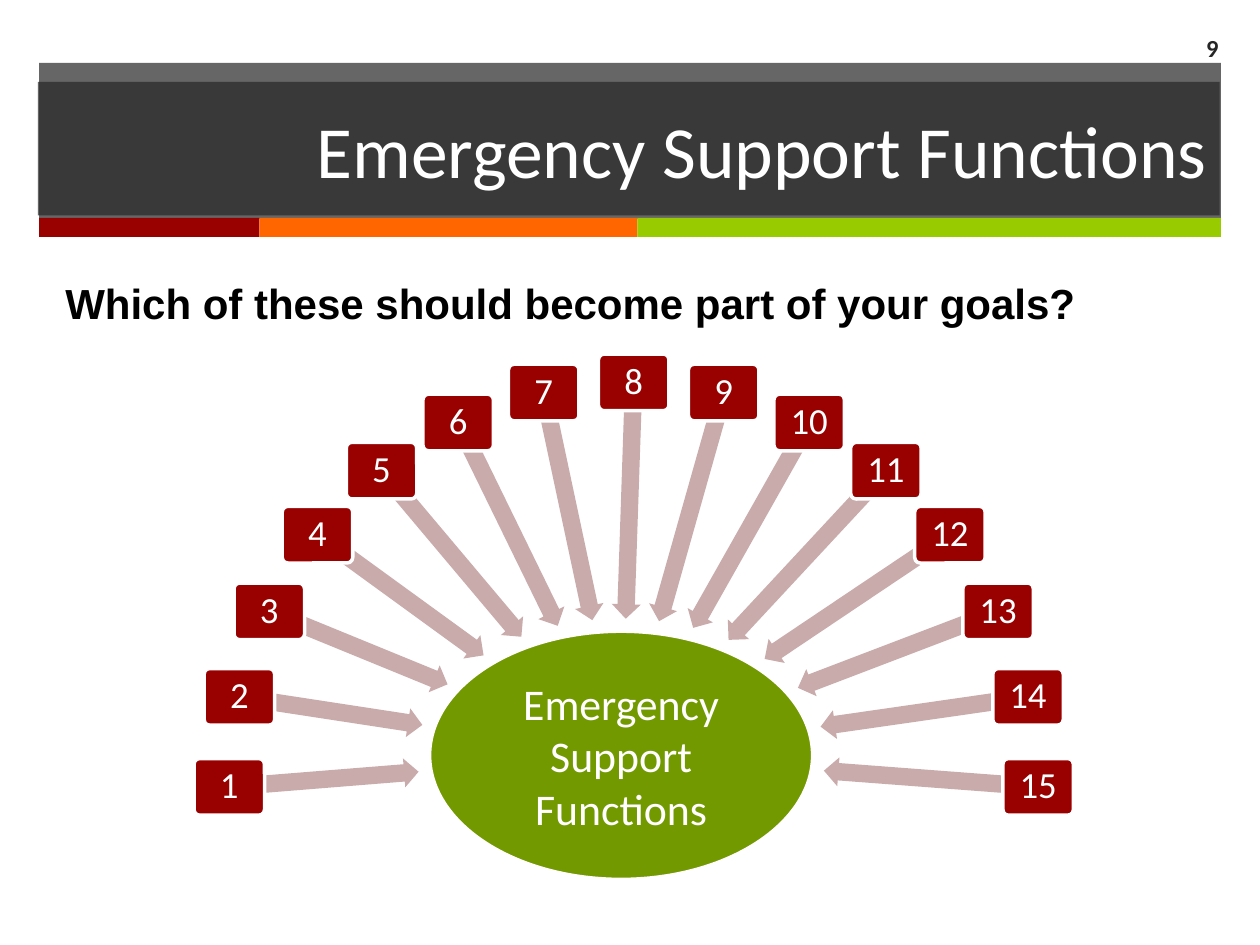
import collections
import math

import pptx
import pptx.dml.color
import pptx.enum.shapes
import pptx.enum.text
import pptx.oxml.ns
import pptx.util
from lxml import etree

SHAPES = pptx.enum.shapes.MSO_SHAPE
ALIGN = pptx.enum.text.PP_ALIGN
ANCHOR = pptx.enum.text.MSO_ANCHOR

COLUMNS, ROWS = 100, 75
CELL = pptx.util.Inches(0.1)

Box = collections.namedtuple("Box", "left top width height")


class Theme:
    """Colours, fonts and type sizes of the slide."""
    dark, white, black = "262626", "FFFFFF", "000000"
    red, orange, lime = "990000", "FF6600", "99CC00"
    hub, arrow = "739900", "CAABAB"
    font, question_font = "Calibri", "Arial"
    title, hub_size, question, card, number = 42, 25, 24, 21, 14


def cells(*counts):
    """Turn counts of grid cells into slide lengths."""
    return [round(count * CELL) for count in counts]


def colour(code):
    """Return the colour object for a hexadecimal code."""
    return pptx.dml.color.RGBColor.from_string(code)


def paint(shape, code, opacity=100, outline=None):
    """Fill a shape, set its outline and drop its shadow."""
    shape.fill.solid()
    shape.fill.fore_color.rgb = colour(code)
    if opacity < 100:
        tone = shape.fill._xPr.find(".//" + pptx.oxml.ns.qn("a:srgbClr"))
        etree.SubElement(tone, pptx.oxml.ns.qn("a:alpha"), val=str(opacity * 1000))
    if outline:
        shape.line.color.rgb = colour(outline)
        shape.line.width = pptx.util.Pt(2)
    else:
        shape.line.fill.background()


def add_block(slide, kind, box, code, **finish):
    """Add a painted preset shape in a box."""
    block = slide.shapes.add_shape(kind, *cells(*box))
    block.shadow.inherit = False
    paint(block, code, **finish)
    return block


def write(shape, text, size, code=Theme.white, font=Theme.font, bold=False,
          align=ALIGN.CENTER, anchor=ANCHOR.MIDDLE, inset=None, spacing=None):
    """Put formatted text into a shape."""
    frame = shape.text_frame
    frame.text = text
    frame.word_wrap = True
    frame.auto_size = pptx.enum.text.MSO_AUTO_SIZE.NONE
    frame.vertical_anchor = anchor
    if inset is not None:
        frame.margin_left = frame.margin_right = pptx.util.Inches(inset)
        frame.margin_top = frame.margin_bottom = pptx.util.Inches(inset)
    paragraph = frame.paragraphs[0]
    paragraph.alignment = align
    paragraph.line_spacing = spacing
    style = paragraph.runs[0].font
    style.name, style.size, style.bold = font, pptx.util.Pt(size), bold
    style.color.rgb = colour(code)


def build_header(slide, box, text):
    """Draw the title band with its colour strip along the bottom."""
    strip = 1.5
    add_block(slide, SHAPES.RECTANGLE, box._replace(height=box.height - 1.4),
              Theme.dark, opacity=70)
    left = box.left
    for width, code in ((17.5, Theme.red), (30, Theme.orange), (46.3, Theme.lime)):
        add_block(slide, SHAPES.RECTANGLE,
                  Box(left, box.top + box.height - strip, width, strip), code)
        left += width
    title = slide.shapes.title
    title.left, title.top, title.width, title.height = cells(
        box.left - 0.1, box.top + strip, box.width, 10.6)
    paint(title, Theme.dark, opacity=70)
    write(title, text, Theme.title, align=ALIGN.RIGHT)
    title.element.getparent().append(title.element)


def build_label(slide, box, text, size, **style):
    """Add a line of free text in a box."""
    write(slide.shapes.add_textbox(*cells(*box)), text, size, **style)


def build_fan(slide, box, hub_text, count):
    """Spread numbered cards on a half circle, with arrows to a hub."""
    card_width, card_height, arrow_height, gap = 5.6, 4.5, 2.3, 1
    hub_width, hub_height = 30.4, 19.7
    radius = (box.width - card_width) / 2
    centre_x = box.left + box.width / 2
    centre_y = box.top + card_height / 2 + radius
    hub_x = centre_x - 1
    hub_y = box.top + box.height - hub_height / 2

    hub = add_block(slide, SHAPES.OVAL,
                    Box(hub_x - hub_width / 2, hub_y - hub_height / 2,
                        hub_width, hub_height), Theme.hub, outline=Theme.white)
    write(hub, hub_text, Theme.hub_size, inset=0.02)

    for index in range(count):
        turn = math.pi * (1 + index / (count - 1))
        card_x = centre_x + radius * math.cos(turn)
        card_y = centre_y + radius * math.sin(turn)

        angle = math.atan2(card_y - hub_y, card_x - hub_x)
        rim = 1 / math.hypot(2 * math.cos(angle) / hub_width,
                             2 * math.sin(angle) / hub_height)
        length = math.hypot(card_x - hub_x, card_y - hub_y) - rim - gap
        middle_x = card_x - length / 2 * math.cos(angle)
        middle_y = card_y - length / 2 * math.sin(angle)
        arrow = add_block(slide, SHAPES.LEFT_ARROW,
                          Box(middle_x - length / 2, middle_y - arrow_height / 2,
                              length, arrow_height), Theme.arrow)
        arrow.adjustments[0] = 0.6
        arrow.rotation = math.degrees(angle) % 360

        card = add_block(slide, SHAPES.ROUNDED_RECTANGLE,
                         Box(card_x - card_width / 2, card_y - card_height / 2,
                             card_width, card_height),
                         Theme.red, outline=Theme.white)
        card.adjustments[0] = 0.1
        write(card, str(index + 1), Theme.card, inset=0.04, spacing=0.9)


def main():
    """Build the slide and save it."""
    deck = pptx.Presentation()
    deck.slide_width, deck.slide_height = cells(COLUMNS, ROWS)
    slide = deck.slides.add_slide(deck.slide_layouts.get_by_name("Title Only"))
    build_header(slide, Box(3.1, 5, 93.8, 13.8), "Emergency Support Functions")
    build_fan(slide, Box(15.4, 28.1, 69.8, 41.7), "Emergency Support Functions", 15)
    build_label(slide, Box(90.8, 1.8, 6.9, 3.9), "9", Theme.number,
                code=Theme.dark, bold=True, align=ALIGN.RIGHT)
    build_label(slide, Box(4.2, 21.5, 90.6, 5),
                "Which of these should become part of your goals?", Theme.question,
                code=Theme.black, font=Theme.question_font, bold=True,
                align=ALIGN.LEFT, anchor=ANCHOR.TOP)
    deck.save("out.pptx")


if __name__ == "__main__":
    main()
